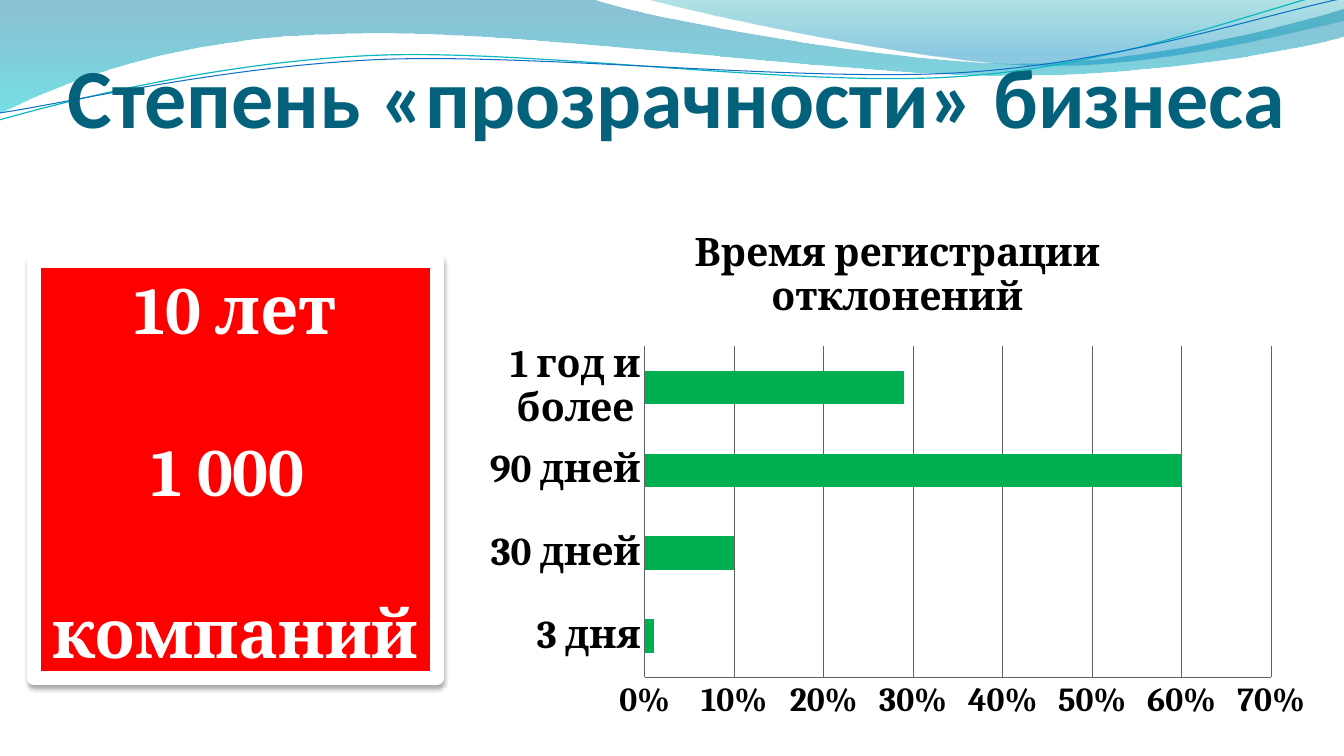
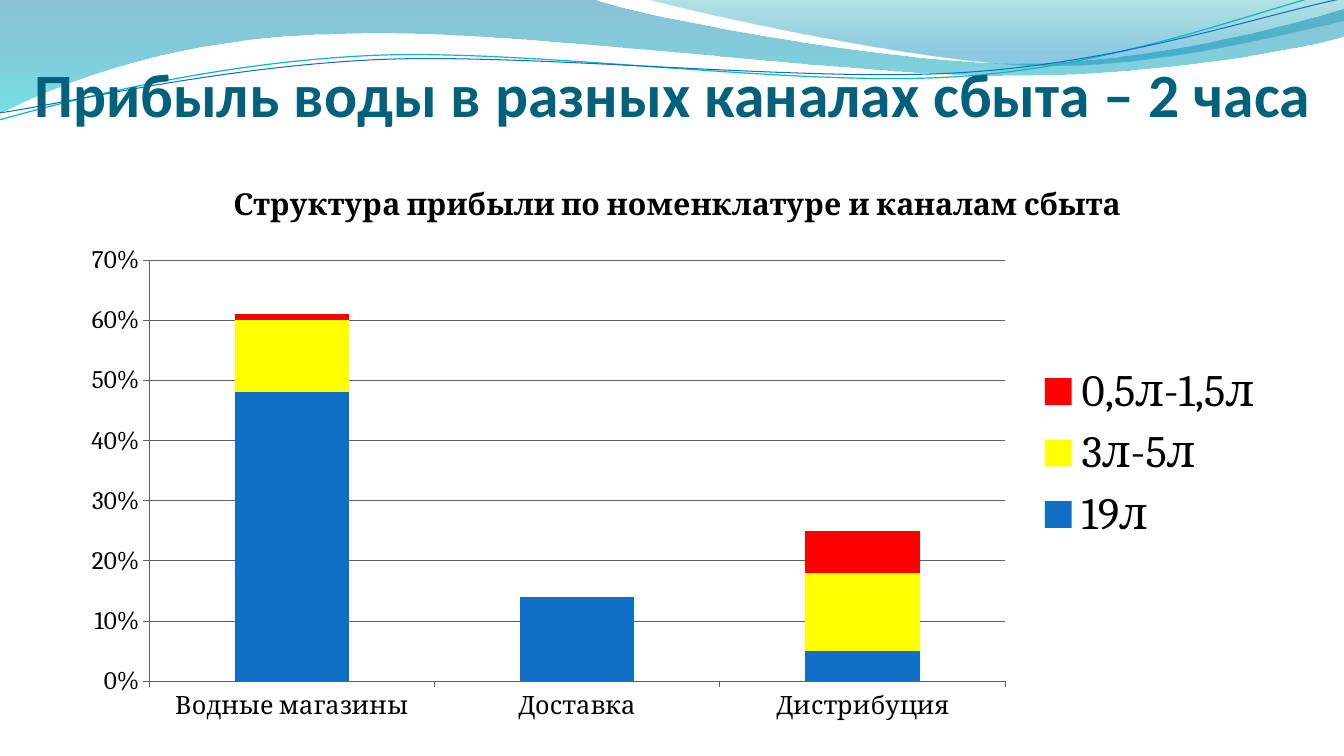
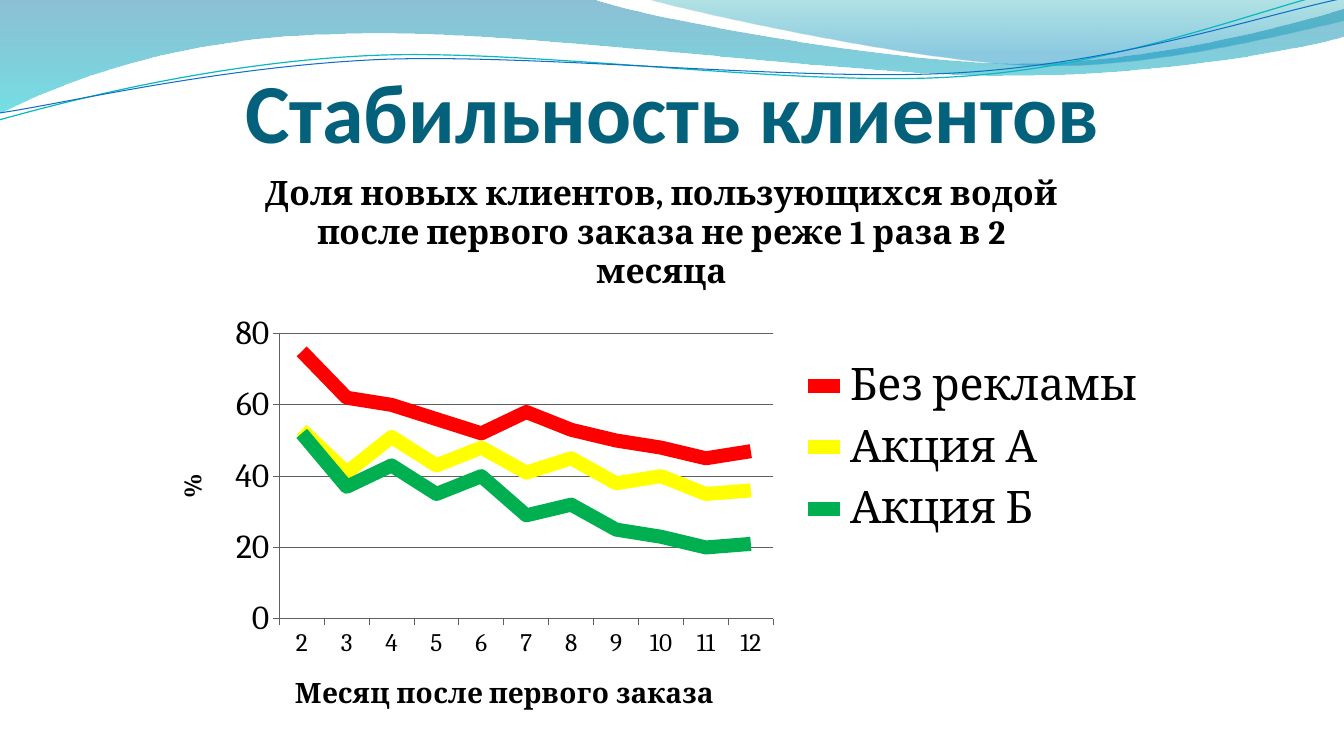
from lxml import etree
from pptx import Presentation
from pptx.chart.data import CategoryChartData
from pptx.dml.color import RGBColor
from pptx.enum.chart import XL_CHART_TYPE, XL_LEGEND_POSITION, XL_TICK_MARK
from pptx.enum.shapes import MSO_SHAPE
from pptx.enum.text import MSO_ANCHOR, MSO_AUTO_SIZE, PP_ALIGN
from pptx.oxml.ns import qn
from pptx.util import Inches, Pt

BAR, STACKED, LINE = (XL_CHART_TYPE.BAR_CLUSTERED, XL_CHART_TYPE.COLUMN_STACKED,
                      XL_CHART_TYPE.LINE)
RIGHT = XL_LEGEND_POSITION.RIGHT
NO_TICK, OUTSIDE = XL_TICK_MARK.NONE, XL_TICK_MARK.OUTSIDE
RECTANGLE = MSO_SHAPE.RECTANGLE
TOP, MIDDLE, BOTTOM = MSO_ANCHOR.TOP, MSO_ANCHOR.MIDDLE, MSO_ANCHOR.BOTTOM
LEFT, CENTER = PP_ALIGN.LEFT, PP_ALIGN.CENTER
NO_AUTOFIT = MSO_AUTO_SIZE.NONE

BLACK = RGBColor(0x00, 0x00, 0x00)
WHITE = RGBColor(0xFF, 0xFF, 0xFF)
RED = RGBColor(0xFF, 0x00, 0x00)
YELLOW = RGBColor(0xFF, 0xFF, 0x00)
GREEN = RGBColor(0x00, 0xB0, 0x50)
BLUE = RGBColor(0x0F, 0x6F, 0xC6)
TEAL = RGBColor(0x0A, 0xB8, 0xBF)
TITLE_TEAL = RGBColor(0x04, 0x61, 0x7B)
GRID_GRAY = RGBColor(0x60, 0x60, 0x60)
DEEP_BLUE = RGBColor(0x00, 0x74, 0xA1)
CYAN = RGBColor(0x00, 0xC6, 0xCF)
SEA = RGBColor(0x00, 0xA1, 0xA9)
SKY = RGBColor(0x00, 0x8B, 0xBF)
TITLE_FONT, BODY_FONT = "Calibri", "Cambria"

BANDS = [
    ((0, 0), [
        (5.87, -0.01),
        (6.34, 0.17, 8.85, 0.63, 10.11, 0.63),
        (11.38, 0.63, 12.78, 0.26, 13.33, 0.09),
        (13.35, 0.36),
        (13.11, 0.44, 11.6, 0.76, 9.94, 0.75),
        (8.29, 0.75, 5.09, 0.28, 3.43, 0.34),
        (1.72, 0.36, 0.61, 0.83, -0.01, 1.13),
        (0, 0),
    ], [(0, DEEP_BLUE, 45), (1, CYAN, 55)]),
    ((6.39, -0.01), [
        (6.79, 0.11, 9.09, 0.62, 10.25, 0.65),
        (11.41, 0.69, 12.82, 0.32, 13.33, 0.21),
        (13.33, 0),
        (6.39, -0.01),
    ], [(0, SEA, 30), (0.8, SKY, 45)]),
]
STRANDS = [
    ((-0.01, 1.19), [
        (0.64, 1.01, 2.11, 0.62, 3.69, 0.55),
        (5.27, 0.48, 7.9, 0.87, 9.5, 0.76),
        (11.1, 0.66, 12.52, 0.08, 13.31, -0.1),
    ], TEAL, 0.85),
    ((0, 1.12), [
        (0.63, 1.03, 2.18, 0.66, 3.78, 0.59),
        (5.37, 0.53, 7.96, 0.82, 9.55, 0.72),
        (11.15, 0.62, 12.55, 0.14, 13.34, -0.02),
    ], BLUE, 0.75),
]


def set_font(font, size, color=BLACK, bold=False, name=BODY_FONT):
    """Apply one complete character format."""
    font.name, font.size, font.bold = name, Pt(size), bold
    font.color.rgb = color


def write_text(frame, lines, align=CENTER, gap=0, **font_format):
    """Write one paragraph per line, with a gap in points between them."""
    for index, line in enumerate(lines):
        para = frame.add_paragraph() if index else frame.paragraphs[0]
        para.alignment = align
        if index and gap:
            para.space_before = Pt(gap)
        span = para.add_run()
        span.text = line
        set_font(span.font, **font_format)


def draw_outline(page, start, segments, close):
    """Draw a freeform whose six-number segments are cubic curves."""
    builder = page.shapes.build_freeform(*map(Inches, start))
    ends = [tuple(map(Inches, segment[-2:])) for segment in segments]
    builder.add_line_segments(ends, close=close)
    shape = builder.convert_to_shape()
    shape.shadow.inherit = False
    for node, segment in zip(list(shape.element.iter(qn("a:lnTo"))), segments):
        if len(segment) == 6:
            curve = etree.Element(qn("a:cubicBezTo"))
            for x, y in zip(segment[::2], segment[1::2]):
                etree.SubElement(curve, qn("a:pt"), x=str(Inches(x) - shape.left),
                                 y=str(Inches(y) - shape.top))
            node.getparent().replace(node, curve)
    return shape


def add_waves(page, master):
    """Draw the wave header and place it on the shared master."""
    waves = []
    for start, segments, stops in BANDS:
        band = draw_outline(page, start, segments, True)
        band.fill.gradient()
        band.fill.gradient_angle = 270
        for stop, (position, color, _) in zip(band.fill.gradient_stops, stops):
            stop.position = position
            stop.color.rgb = color
        for node, (_, _, opacity) in zip(band.element.iter(qn("a:srgbClr")), stops):
            etree.SubElement(node, qn("a:alpha"), val=str(opacity * 1000))
        band.line.fill.background()
        waves.append(band)
    for start, segments, color, width in STRANDS:
        strand = draw_outline(page, start, segments, False)
        strand.fill.background()
        strand.line.color.rgb = color
        strand.line.width = Pt(width)
        waves.append(strand)
    for index, wave in enumerate(waves):
        master.shapes.element.insert(2 + index, wave.element)


def add_title(page, text, box, size=60, anchor=MIDDLE, align=CENTER, inset=0):
    """Place and format the slide title."""
    title = page.shapes.title
    title.left, title.top, title.width, title.height = map(Inches, box)
    frame = title.text_frame
    frame.auto_size = NO_AUTOFIT
    frame.word_wrap = True
    frame.vertical_anchor = anchor
    frame.margin_left = frame.margin_right = Inches(inset)
    frame.margin_top, frame.margin_bottom = Inches(0.05), Inches(inset / 2)
    write_text(frame, [text], align, size=size, color=TITLE_TEAL, bold=True, name=TITLE_FONT)


def format_axis(axis, size, bold=False, tick=OUTSIDE, title=None, title_size=18):
    """Format the line, labels and title of an axis."""
    axis.major_tick_mark, axis.minor_tick_mark = tick, NO_TICK
    axis.format.line.color.rgb = GRID_GRAY
    axis.format.line.width = Pt(0.75)
    set_font(axis.tick_labels.font, size, bold=bold)
    if title:
        write_text(axis.axis_title.text_frame, [title], size=title_size, bold=True)


def place_part(parent, index, chart_box, part_box):
    """Fix the place of a chart part, given in slide inches."""
    for old in parent.findall(qn("c:layout")):
        parent.remove(old)
    layout = etree.Element(qn("c:layout"))
    parent.insert(index, layout)
    manual = etree.SubElement(layout, qn("c:manualLayout"))
    left, top, width, height = chart_box
    x, y, *extent = part_box
    if extent:
        etree.SubElement(manual, qn("c:layoutTarget"), val="inner")
    for mode in ("xMode", "yMode"):
        etree.SubElement(manual, qn("c:" + mode), val="edge")
    shares = [(x - left) / width, (y - top) / height]
    shares += [size / whole for size, whole in zip(extent, (width, height))]
    for key, share in zip("xywh", shares):
        etree.SubElement(manual, qn("c:" + key), val=str(round(share, 4)))


def add_chart(page, kind, box, title, categories, series, title_size, top, unit,
              number_format, category_style, value_style, title_at=None, plot_box=None):
    """Add a chart; series holds names, values and colours."""
    data = CategoryChartData()
    data.categories = categories
    for name, values, _ in series:
        data.add_series(name, values)
    chart = page.shapes.add_chart(kind, *map(Inches, box), data).chart
    set_font(chart.font, 18)
    chart.has_title = True
    write_text(chart.chart_title.text_frame, [title], size=title_size, bold=True)
    chart.chart_title.include_in_layout = False
    chart.has_legend = len(series) > 1
    if chart.has_legend:
        chart.legend.position = RIGHT
        chart.legend.include_in_layout = False
        set_font(chart.legend.font, 32)

    format_axis(chart.category_axis, **category_style)
    values_axis = chart.value_axis
    format_axis(values_axis, **value_style)
    values_axis.minimum_scale, values_axis.maximum_scale = 0, top
    values_axis.major_unit = unit
    values_axis.tick_labels.number_format = number_format
    values_axis.tick_labels.number_format_is_linked = False
    values_axis.has_major_gridlines = True
    grid = values_axis.major_gridlines.format.line
    grid.color.rgb, grid.width = GRID_GRAY, Pt(0.75)

    plot = chart.plots[0]
    plot.vary_by_categories = False
    if kind != LINE:
        plot.gap_width = 150
    if kind == STACKED:
        plot.overlap = 100
    for item, (_, _, color) in zip(plot.series, series):
        if kind == LINE:
            item.smooth = False
            item.format.line.color.rgb = color
            item.format.line.width = Pt(10)
        else:
            item.format.fill.solid()
            item.format.fill.fore_color.rgb = color
    chart_node = chart.element.find(qn("c:chart"))
    if title_at:
        place_part(chart_node.find(qn("c:title")), 1, box, title_at)
    if plot_box:
        place_part(chart_node.find(qn("c:plotArea")), 0, box, plot_box)


def add_fact_card(page, box, lines):
    """Add the red card with a white frame and a soft shadow."""
    card = page.shapes.add_shape(RECTANGLE, *map(Inches, box))
    card.shadow.inherit = False
    card.fill.solid()
    card.fill.fore_color.rgb = RED
    card.line.color.rgb = WHITE
    card.line.width = Pt(10)
    etree.SubElement(card.element.spPr.find(qn("a:ln")), qn("a:round"))
    effects = card.element.spPr.find(qn("a:effectLst"))
    shadow = etree.SubElement(effects, qn("a:outerShdw"), blurRad=str(Pt(3.5)),
                              dist=str(Pt(2.2)), dir="5400000", rotWithShape="0")
    color = etree.SubElement(shadow, qn("a:srgbClr"), val=str(BLACK))
    etree.SubElement(color, qn("a:alpha"), val="32000")
    card.text_frame.word_wrap = True
    card.text_frame.vertical_anchor = MIDDLE
    write_text(card.text_frame, lines, gap=58, size=48, color=WHITE, bold=True)


def build_transparency(page):
    """Build the slide on how open the business is."""
    add_title(page, "Степень «прозрачности» бизнеса", (0.38, 0.14, 12.67, 1.3), anchor=BOTTOM)
    add_chart(page, BAR, (4.69, 2.03, 8.42, 5.22), "Время регистрации отклонений",
              ["3 дня", "30 дней", "90 дней", "1 год и более"],
              [("Series 1", [0.01, 0.1, 0.6, 0.29], GREEN)],
              title_size=28, top=0.7, unit=0.1, number_format="0%",
              category_style=dict(size=28, bold=True, tick=NO_TICK),
              value_style=dict(size=24, bold=True, tick=NO_TICK))
    add_fact_card(page, (0.34, 2.59, 3.99, 4.14), ["10 лет", "1 000 ", "компаний"])


def build_profit(page):
    """Build the slide on profit by sales channel."""
    add_title(page, "Прибыль воды в разных каналах сбыта – 2 часа",
              (0.24, 0.5, 12.98, 0.84), size=44, anchor=TOP, align=LEFT, inset=0.1)
    add_chart(page, STACKED, (0.67, 1.72, 12, 5.55),
              "Структура прибыли по номенклатуре и каналам сбыта",
              ["Водные магазины", "Доставка", "Дистрибуция"],
              [("19л", [0.48, 0.14, 0.05], BLUE),
               ("3л-5л", [0.12, None, 0.13], YELLOW),
               ("0,5л-1,5л", [0.01, None, 0.07], RED)],
              title_size=21.6, top=0.7, unit=0.1, number_format="0%",
              category_style=dict(size=18), value_style=dict(size=18),
              title_at=(2.26, 1.78), plot_box=(1.48, 2.58, 8.49, 4.18))


def build_stability(page):
    """Build the slide on how many new clients stay."""
    add_title(page, "Стабильность клиентов", (0.67, 0.44, 12, 1.25))
    add_chart(page, LINE, (1.52, 1.58, 10, 5.72),
              "Доля новых клиентов, пользующихся водой после первого заказа "
              "не реже 1 раза в 2 месяца",
              [str(month) for month in range(2, 13)],
              [("Без рекламы", [75, 62, 60, 56, 52, 58, 53, 50, 48, 45, 47], RED),
               ("Акция А", [53, 41, 51, 43, 48, 41, 45, 38, 40, 35, 36], YELLOW),
               ("Акция Б", [52, 37, 43, 35, 40, 29, 32, 25, 23, 20, 21], GREEN)],
              title_size=24, top=80, unit=20, number_format="0",
              category_style=dict(size=18, title="Месяц после первого заказа", title_size=20),
              value_style=dict(size=24, title="%"),
              title_at=(2.57, 1.64), plot_box=(2.77, 3.31, 4.9, 2.83))


def main():
    """Build and save the deck."""
    deck = Presentation()
    deck.slide_width, deck.slide_height = Inches(13.33), Inches(7.5)
    layout = deck.slide_layouts[5]
    pages = []
    for build in (build_transparency, build_profit, build_stability):
        page = deck.slides.add_slide(layout)
        build(page)
        pages.append(page)
    add_waves(pages[0], deck.slide_master)
    deck.save("out.pptx")


if __name__ == "__main__":
    main()
